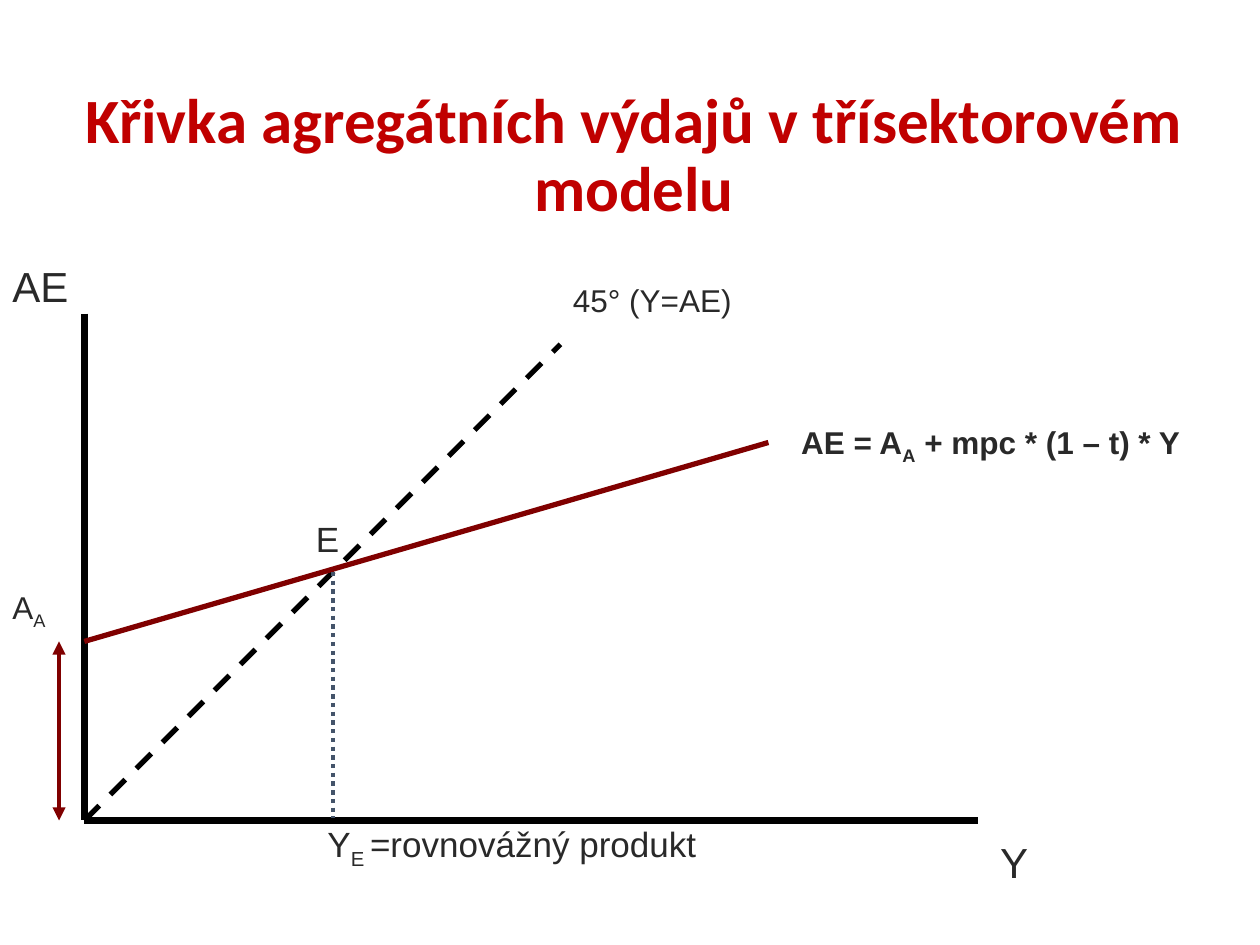
from lxml import etree
from pptx import Presentation
from pptx import util as u
from pptx.dml.color import RGBColor
from pptx.enum import dml, shapes, text
from pptx.oxml.ns import qn

COLOURS = {
    "title": "C00000",
    "axis": "000000",
    "spending": "800000",
    "guide": "44546A",
    "label": "292929",
}

# Key points of the diagram, in centimetres
ORIGIN_X, ORIGIN_Y = 1.7, 16.54
AXIS_TOP, AXIS_RIGHT = 6.32, 19.71
DIAGONAL = 9.6          # equal run and rise of the 45° line
INTERCEPT_Y = 12.93     # autonomous spending
EQUILIBRIUM = 5.01      # distance of E from both axes
ARROW_X = 1.19


def colour(name):
    return RGBColor.from_string(COLOURS[name])


def add_run(para, words, size, font, tint, bold=False, subscript=False):
    span = para.add_run()
    span.text = words
    span.font.size = u.Pt(size)
    span.font.name = font
    span.font.bold = bold
    span.font.color.rgb = colour(tint)
    if subscript:
        span.font._element.set("baseline", "-25000")


def add_title(page, words):
    title = page.shapes.title
    title.left, title.top = u.Cm(1.35), u.Cm(1.57)
    title.width, title.height = u.Cm(22.86), u.Cm(3.18)
    frame = title.text_frame
    frame.word_wrap = True
    frame.auto_size = text.MSO_AUTO_SIZE.NONE
    frame.vertical_anchor = text.MSO_ANCHOR.MIDDLE
    para = frame.paragraphs[0]
    para.alignment = text.PP_ALIGN.CENTER
    para.line_spacing = 0.9
    add_run(para, words, 36, "Calibri", "title", bold=True)


def add_label(page, left, top, width, height, size, pieces, bold=False):
    """Write the pieces in one line; every second piece is a subscript."""
    box = page.shapes.add_textbox(u.Cm(left), u.Cm(top), u.Cm(width), u.Cm(height))
    frame = box.text_frame
    frame.word_wrap = True
    frame.auto_size = text.MSO_AUTO_SIZE.SHAPE_TO_FIT_TEXT
    for index, words in enumerate(pieces):
        add_run(frame.paragraphs[0], words, size, "Arial", "label",
                bold=bold, subscript=index % 2 == 1)


def add_line(page, start, end, tint, weight, dash=None, arrows=False):
    line = page.shapes.add_connector(
        shapes.MSO_CONNECTOR.STRAIGHT, *[u.Cm(value) for value in (*start, *end)])
    line.line.color.rgb = colour(tint)
    line.line.width = u.Pt(weight)
    if dash is not None:
        line.line.dash_style = dash
    if arrows:
        outline = line.line._get_or_add_ln()
        for tip in ("a:headEnd", "a:tailEnd"):
            etree.SubElement(outline, qn(tip), type="triangle")
    etree.SubElement(line._element.spPr, qn("a:effectLst"))


def main():
    deck = Presentation()
    deck.slide_width, deck.slide_height = u.Cm(25.4), u.Cm(19.05)
    page = deck.slides.add_slide(deck.slide_layouts[5])
    add_title(page, "Křivka agregátních výdajů v třísektorovém modelu")

    # Axes
    origin = (ORIGIN_X, ORIGIN_Y)
    add_line(page, (ORIGIN_X, AXIS_TOP), origin, "axis", 4)
    add_line(page, origin, (AXIS_RIGHT, ORIGIN_Y), "axis", 4)
    add_label(page, 0, 5.13, 2.39, 1.27, 24, ["AE"])
    add_label(page, 19.91, 16.74, 2.59, 1.27, 24, ["Y"])

    # 45° line
    add_line(page, origin, (ORIGIN_X + DIAGONAL, ORIGIN_Y - DIAGONAL),
             "axis", 3, dash=dml.MSO_LINE.DASH)
    add_label(page, 11.3, 5.54, 4.01, 1.02, 18, ["45° (Y=AE)"])

    # Aggregate spending and its autonomous part
    add_line(page, (ORIGIN_X, INTERCEPT_Y), (15.49, 8.92), "spending", 3)
    add_label(page, 15.9, 8.41, 8.61, 1.02, 18,
              ["AE = A", "A", " + mpc * (1 – t) * Y"], bold=True)
    add_line(page, (ARROW_X, INTERCEPT_Y), (ARROW_X, ORIGIN_Y),
             "spending", 2.5, arrows=True)
    add_label(page, 0, 11.73, 2.69, 1.02, 18, ["A", "A"])

    # Equilibrium
    equilibrium_x = ORIGIN_X + EQUILIBRIUM
    add_line(page, (equilibrium_x, ORIGIN_Y - EQUILIBRIUM), (equilibrium_x, 16.48),
             "guide", 2.5, dash=dml.MSO_LINE.ROUND_DOT)
    add_label(page, 6.35, 16.46, 10.52, 1.12, 20, ["Y", "E ", "=rovnovážný produkt"])
    add_label(page, 6.12, 10.31, 1.09, 1.12, 20, ["E"])

    deck.save("out.pptx")


if __name__ == "__main__":
    main()
